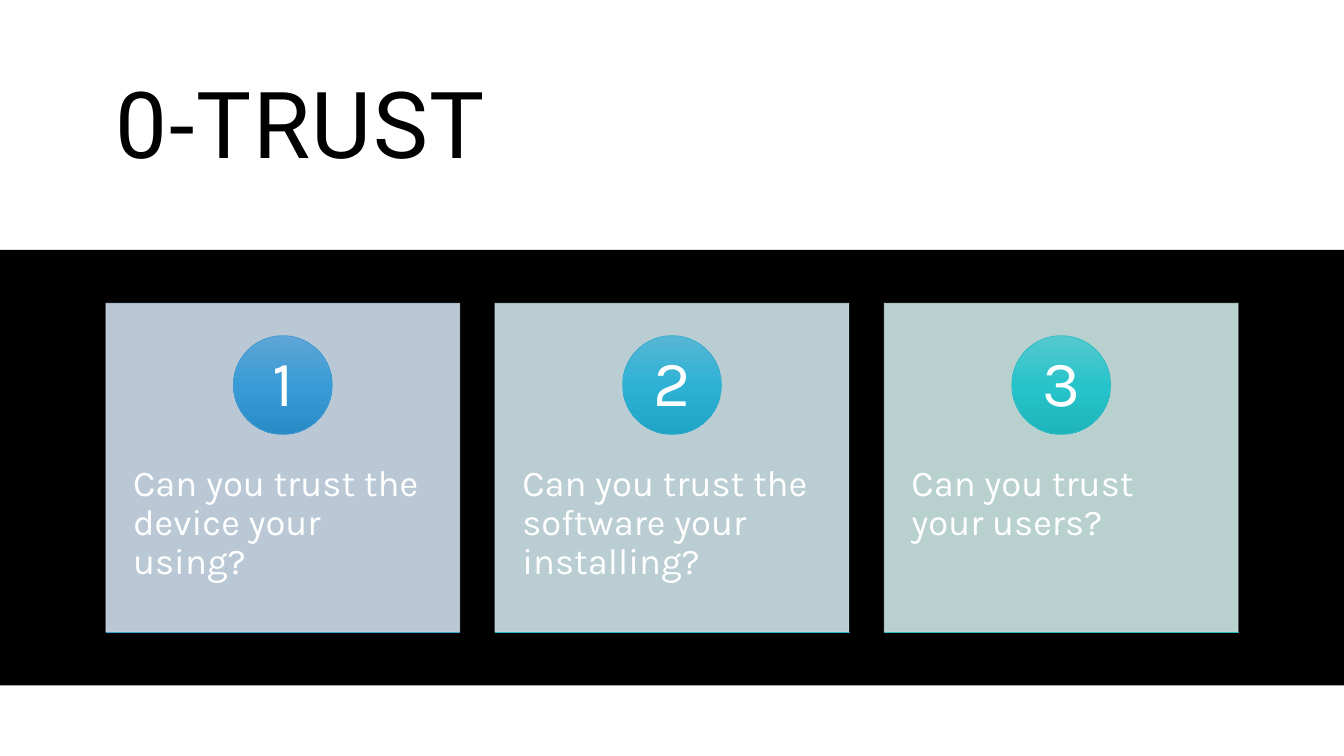
from dataclasses import dataclass

from lxml.etree import SubElement
from pptx import Presentation
from pptx.dml.color import RGBColor
from pptx.enum.shapes import MSO_SHAPE
from pptx.enum.text import MSO_ANCHOR, PP_ALIGN
from pptx.oxml.ns import qn
from pptx.util import Inches, Pt


@dataclass(frozen=True)
class Theme:
    """Colours, fonts and type sizes of the slide."""
    white: str = "FFFFFF"
    black: str = "000000"
    title_font: str = "Roboto"
    body_font: str = "Karla"
    title_size: int = 66
    body_size: int = 26
    number_size: int = 46
    line_width: float = 0.5
    opacity: int = 90


@dataclass(frozen=True)
class Card:
    """Wording and colours of one question card."""
    question: str
    panel: str
    badge: tuple
    badge_line: str
    rule: tuple
    rule_line: str


THEME = Theme()
CARDS = [
    Card("Can you trust the device your using?", "CFDEEE",
         ("5FA5D6", "399CD7", "2A8CC7"), "409AD0",
         ("5BADD5", "33A6D6", "2597C7"), "3AA3CF"),
    Card("Can you trust the software your installing?", "CEE4EB",
         ("58B6D4", "2DB2D5", "1FA3C6"), "34ADCD",
         ("55C0D3", "29BCD1", "1EACC0"), "31B6C9"),
    Card("Can you trust your users?", "CDE8E6",
         ("54C8CE", "28C4CB", "1DB4BB"), "30BEC4",
         ("54C8C2", "27C5BF", "1CB6AF"), "2EBEB8"),
]
CARD_LEFT, CARD_TOP, CARD_PITCH = 1.05, 3.01, 3.86
CARD_WIDTH, CARD_HEIGHT = 3.51, 3.26
BADGE_SIZE, NUMBER_SIZE = 0.98, 0.69


def set_opacity(fill, percent):
    """Make a solid fill partly transparent."""
    color = fill._xPr.find(qn("a:solidFill"))[0]
    SubElement(color, qn("a:alpha"), val=str(percent * 1000))


def set_gradient(fill, colors):
    """Fill from top to bottom with evenly spaced colours."""
    fill.gradient()
    fill.gradient_angle = 270
    stops = fill._xPr.find(qn("a:gradFill")).find(qn("a:gsLst"))
    for stop in list(stops):
        stops.remove(stop)
    for index, color in enumerate(colors):
        position = 100000 * index // (len(colors) - 1)
        stop = SubElement(stops, qn("a:gs"), pos=str(position))
        SubElement(stop, qn("a:srgbClr"), val=color)


def add_block(page, left, top, width, height, *, fill, line=None,
              kind=MSO_SHAPE.RECTANGLE, opacity=None):
    """Add a shape with a solid fill or a gradient."""
    block = page.shapes.add_shape(
        kind, Inches(left), Inches(top), Inches(width), Inches(height))
    block.shadow.inherit = False
    if isinstance(fill, tuple):
        set_gradient(block.fill, fill)
    else:
        block.fill.solid()
        block.fill.fore_color.rgb = RGBColor.from_string(fill)
    if line:
        block.line.color.rgb = RGBColor.from_string(line)
        block.line.width = Pt(THEME.line_width)
    else:
        block.line.fill.background()
    if opacity:
        set_opacity(block.fill, opacity)
        if line:
            set_opacity(block.line.fill, opacity)


def add_text(page, text, left, top, width, height, *, font, size, color,
             insets=(0.1, 0.05), anchor=MSO_ANCHOR.TOP,
             align=PP_ALIGN.LEFT, spacing=None):
    """Add a one-paragraph text box."""
    box = page.shapes.add_textbox(
        Inches(left), Inches(top), Inches(width), Inches(height))
    frame = box.text_frame
    frame.word_wrap = True
    frame.vertical_anchor = anchor
    frame.margin_left = frame.margin_right = Inches(insets[0])
    frame.margin_top = frame.margin_bottom = Inches(insets[1])
    para = frame.paragraphs[0]
    para.alignment = align
    para.line_spacing = 0.9
    span = para.add_run()
    span.text = text
    span.font.name = font
    span.font.size = Pt(size)
    span.font.color.rgb = RGBColor.from_string(color)
    if spacing:
        span.font._element.set("spc", str(round(spacing * 100)))


def add_card(page, index, card):
    """Add a panel with its question, numbered badge and bottom rule."""
    left = CARD_LEFT + index * CARD_PITCH
    badge_left = left + (CARD_WIDTH - BADGE_SIZE) / 2
    number_left = left + (CARD_WIDTH - NUMBER_SIZE) / 2
    add_block(page, left, CARD_TOP, CARD_WIDTH, CARD_HEIGHT,
              fill=card.panel, line=card.panel, opacity=THEME.opacity)
    add_text(page, card.question, left, 4.25, CARD_WIDTH, 1.96,
             font=THEME.body_font, size=THEME.body_size, color=THEME.white,
             insets=(0.27, 0.36))
    add_block(page, badge_left, 3.33, BADGE_SIZE, BADGE_SIZE,
              fill=card.badge, line=card.badge_line, kind=MSO_SHAPE.OVAL)
    add_text(page, str(index + 1), number_left, 3.48, NUMBER_SIZE, NUMBER_SIZE,
             font=THEME.body_font, size=THEME.number_size, color=THEME.white,
             insets=(0.08, 0.01), anchor=MSO_ANCHOR.MIDDLE,
             align=PP_ALIGN.CENTER)
    add_block(page, left, CARD_TOP + CARD_HEIGHT, CARD_WIDTH, 0,
              fill=card.rule, line=card.rule_line)


def main():
    """Build the slide and save it."""
    deck = Presentation()
    deck.slide_width, deck.slide_height = Inches(13.33), Inches(7.5)
    page = deck.slides.add_slide(deck.slide_layouts[6])
    page.background.fill.solid()
    page.background.fill.fore_color.rgb = RGBColor.from_string(THEME.black)
    add_block(page, 0, 0, 13.33, 7.5, fill=THEME.white)
    add_text(page, "0-TRUST", 1.05, 0.35, 11.23, 1.86,
             font=THEME.title_font, size=THEME.title_size, color=THEME.black,
             anchor=MSO_ANCHOR.MIDDLE, spacing=1.2)
    add_block(page, 0, 2.48, 13.33, 4.32, fill=THEME.black)
    for index, card in enumerate(CARDS):
        add_card(page, index, card)
    deck.save("out.pptx")


if __name__ == "__main__":
    main()
